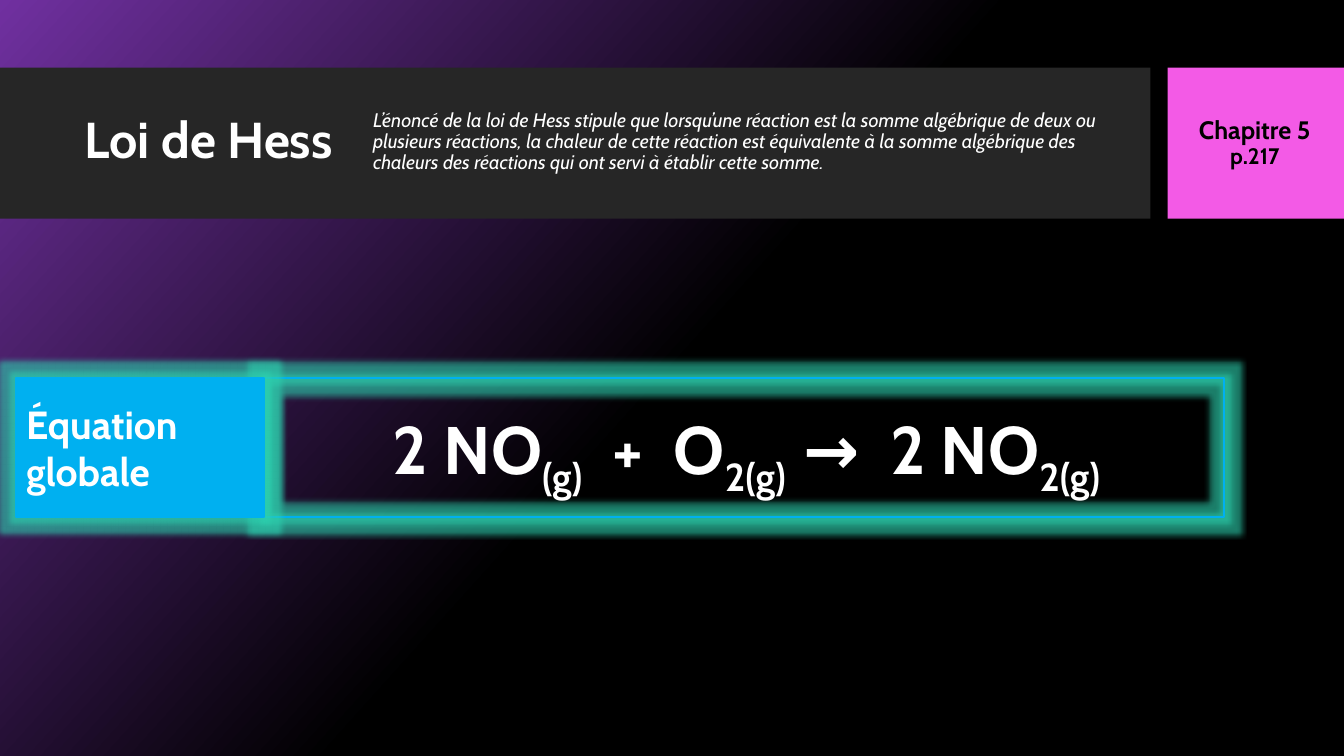
from dataclasses import dataclass

from lxml import etree
from pptx import Presentation
from pptx.dml.color import RGBColor
from pptx.enum.shapes import MSO_SHAPE
from pptx.enum.text import MSO_ANCHOR, MSO_AUTO_SIZE, PP_ALIGN
from pptx.oxml.ns import qn
from pptx.util import Inches, Pt

RECTANGLE = MSO_SHAPE.RECTANGLE
MIDDLE, TOP = MSO_ANCHOR.MIDDLE, MSO_ANCHOR.TOP
LEFT, CENTER = PP_ALIGN.LEFT, PP_ALIGN.CENTER
FIXED, GROW = MSO_AUTO_SIZE.NONE, MSO_AUTO_SIZE.SHAPE_TO_FIT_TEXT


@dataclass(frozen=True)
class Theme:
    font: str = "Cabin"
    white: str = "FFFFFF"
    black: str = "000000"
    purple: str = "7030A0"
    band: str = "262626"
    pink: str = "F35AE6"
    blue: str = "00B0F0"
    glow: str = "2DD2B0"
    title: int = 36
    statement: int = 14
    chapter: int = 18
    page: int = 16
    label: int = 28
    equation: int = 48


class HessSlide:
    """Builds the elements of one slide in a shared style."""

    def __init__(self, slide, theme):
        self.slide = slide
        self.theme = theme

    def background(self, angle):
        fill = self.slide.background.fill
        fill.gradient()
        fill.gradient_angle = 360 - angle
        stops = ((0, self.theme.purple), (0.5, self.theme.black))
        for stop, (position, color) in zip(fill.gradient_stops, stops):
            stop.position = position
            stop.color.rgb = RGBColor.from_string(color)

    def block(self, box, fill=None, outline=None):
        block = self.slide.shapes.add_shape(RECTANGLE, *map(Inches, box))
        block.shadow.inherit = False
        if fill:
            block.fill.solid()
            block.fill.fore_color.rgb = RGBColor.from_string(fill)
        else:
            block.fill.background()
        if outline:
            block.line.color.rgb = RGBColor.from_string(outline)
            block.line.width = Pt(1)
        else:
            block.line.fill.background()
        return block

    def glowing_block(self, box, fill=None):
        block = self.block(box, fill, self.theme.blue)
        effects = block._element.spPr.find(qn("a:effectLst"))
        glow = etree.SubElement(effects, qn("a:glow"), rad=str(Inches(0.11)))
        color = etree.SubElement(glow, qn("a:srgbClr"), val=self.theme.glow)
        etree.SubElement(color, qn("a:alpha"), val="60000")
        return block

    def placeholder(self, index, box):
        holder = self.slide.placeholders[index]
        holder.left, holder.top, holder.width, holder.height = map(Inches, box)
        self.slide.shapes._spTree.append(holder._element)
        return holder

    def textbox(self, box):
        return self.slide.shapes.add_textbox(*map(Inches, box))

    def frame(self, shape, anchor=MIDDLE, fit=FIXED):
        frame = shape.text_frame
        frame.word_wrap = True
        frame.auto_size = fit
        frame.vertical_anchor = anchor
        return frame

    def style(self, paragraph, size, color, align=LEFT, spacing=1.0, bold=True, italic=False):
        properties = paragraph._p.get_or_add_pPr()
        properties.set("marL", "0")
        properties.set("indent", "0")
        etree.SubElement(properties, qn("a:buNone"))
        paragraph.alignment = align
        paragraph.line_spacing = spacing
        paragraph.space_before = Pt(0)
        font = paragraph.font
        font.name = self.theme.font
        font.size = Pt(size)
        font.bold = bold
        font.italic = italic
        font.color.rgb = RGBColor.from_string(color)

    def fill_text(self, shape, lines, color, **look):
        frame = self.frame(shape)
        for number, (text, size) in enumerate(lines):
            paragraph = frame.add_paragraph() if number else frame.paragraphs[0]
            paragraph.text = text
            self.style(paragraph, size, color, **look)

    def equation(self, box, parts):
        frame = self.frame(self.textbox(box), TOP, GROW)
        paragraph = frame.paragraphs[0]
        for text, is_subscript in parts:
            run = paragraph.add_run()
            run.text = text
            if is_subscript:
                run.font._element.set("baseline", "-25000")
        self.style(paragraph, self.theme.equation, self.theme.white, CENTER)


def main():
    theme = Theme()
    presentation = Presentation()
    presentation.slide_width = Inches(13.33)
    presentation.slide_height = Inches(7.5)
    slide = presentation.slides.add_slide(presentation.slide_layouts[1])
    hess = HessSlide(slide, theme)
    hess.background(42)

    hess.block((0, 0.67, 11.41, 1.5), theme.band)
    hess.block((11.58, 0.67, 1.75, 1.5), theme.pink)

    title = hess.placeholder(0, (0.74, 0.82, 10.51, 1.18))
    hess.fill_text(title, [("Loi de Hess", theme.title)], theme.white, spacing=0.9)

    chapter = hess.textbox((11.56, 0.67, 1.77, 1.51))
    reference = [("Chapitre 5", theme.chapter), ("p.217", theme.page)]
    hess.fill_text(chapter, reference, theme.black, align=CENTER, spacing=0.9)

    statement = hess.placeholder(1, (3.6, 0.82, 7.56, 1.18))
    law = (
        "L’énoncé de la loi de Hess stipule que lorsqu’une réaction est la somme "
        "algébrique de deux ou plusieurs réactions, la chaleur de cette réaction est "
        "équivalente à la somme algébrique des chaleurs des réactions qui ont servi "
        "à établir cette somme."
    )
    hess.fill_text(statement, [(law, theme.statement)], theme.white,
                   spacing=0.9, bold=False, italic=True)

    hess.glowing_block((2.62, 3.75, 9.52, 1.38))
    label = hess.glowing_block((0.16, 3.75, 2.46, 1.38), theme.blue)
    hess.fill_text(label, [("Équation globale", theme.label)], theme.white)

    hess.equation((3.12, 3.99, 8.57, 0.91), [
        ("2 NO", False), ("(g)", True), ("  +  O", False),
        ("2(g)  ", True), ("→  2 NO", False), ("2(g)", True),
    ])

    presentation.save("out.pptx")


if __name__ == "__main__":
    main()
